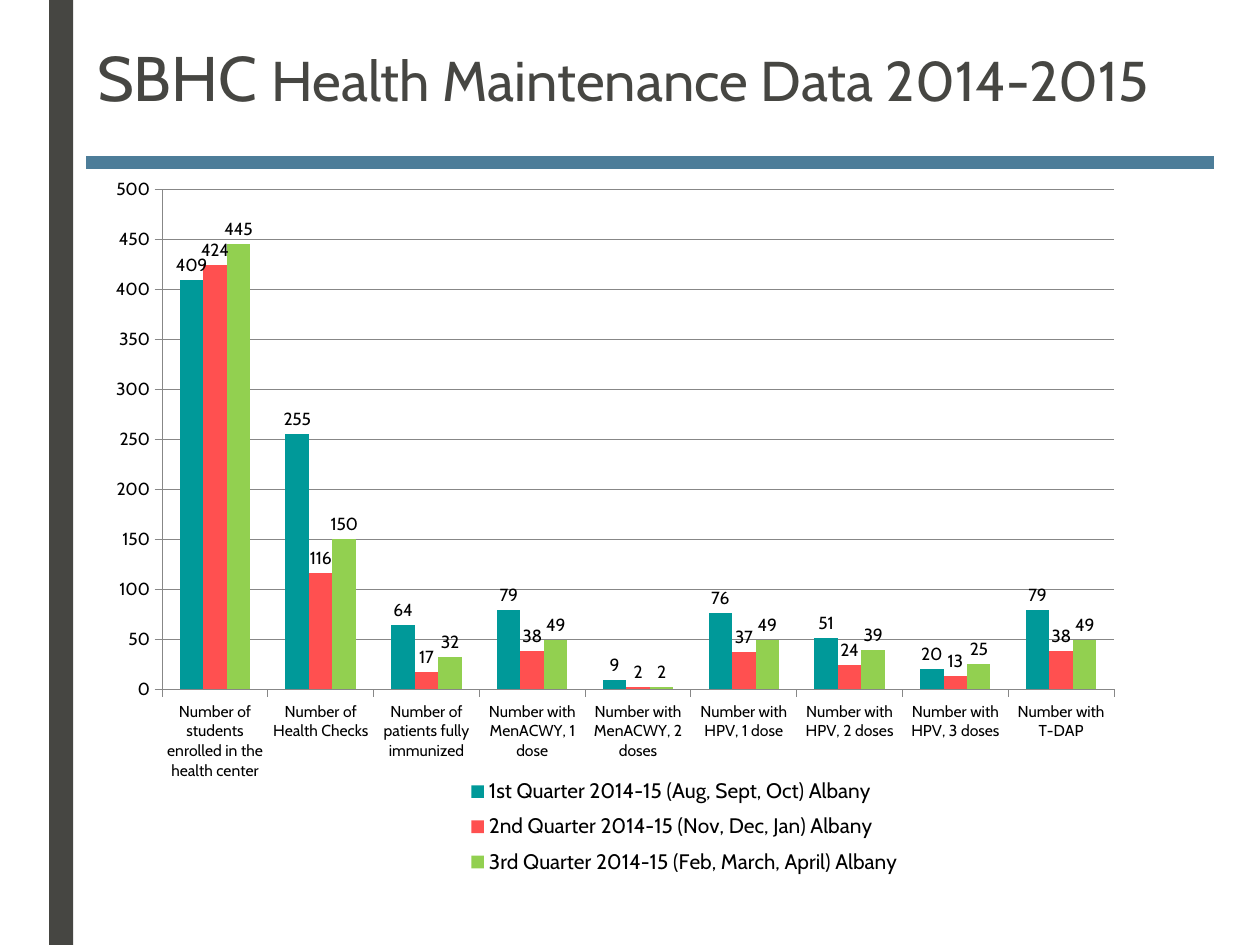
from lxml import etree
from pptx import Presentation
from pptx.chart.data import CategoryChartData
from pptx.dml.color import RGBColor
from pptx.enum.chart import XL_CHART_TYPE, XL_LABEL_POSITION, XL_LEGEND_POSITION, XL_TICK_MARK
from pptx.enum.shapes import MSO_SHAPE
from pptx.enum.text import MSO_ANCHOR, MSO_AUTO_SIZE, PP_ALIGN
from pptx.oxml.ns import qn
from pptx.util import Pt

PX = 9144
FONT = "Cabin"
COLORS = {
    "dark": "464642", "rule": "4D7D99", "text": "000000", "grid": "878787",
    "first": "009999", "second": "FF5050", "third": "92D050",
}
COLUMNS = XL_CHART_TYPE.COLUMN_CLUSTERED
OUTSIDE_END = XL_LABEL_POSITION.OUTSIDE_END
LEGEND_RIGHT = XL_LEGEND_POSITION.RIGHT
TICK_OUTSIDE = XL_TICK_MARK.OUTSIDE
TICK_NONE = XL_TICK_MARK.NONE
RECTANGLE, MINUS = MSO_SHAPE.RECTANGLE, MSO_SHAPE.MATH_MINUS
TOP, LEFT, NO_AUTOFIT = MSO_ANCHOR.TOP, PP_ALIGN.LEFT, MSO_AUTO_SIZE.NONE

TITLE_RUNS = [("SBHC ", 36), ("Health Maintenance Data 2014-2015", 32)]
CATEGORIES = [
    "Number of students enrolled in the health center",
    "Number of Health Checks",
    "Number of patients fully immunized",
    "Number with MenACWY, 1 dose",
    "Number with MenACWY, 2 doses",
    "Number with HPV, 1 dose",
    "Number with HPV, 2 doses",
    "Number with HPV, 3 doses",
    "Number with T-DAP",
]
QUARTERS = [
    ("1st Quarter 2014-15 (Aug, Sept, Oct) Albany", "first",
     [409, 255, 64, 79, 9, 76, 51, 20, 79]),
    ("2nd Quarter 2014-15 (Nov, Dec, Jan) Albany", "second",
     [424, 116, 17, 38, 2, 37, 24, 13, 38]),
    ("3rd Quarter 2014-15 (Feb, March, April) Albany", "third",
     [445, 150, 32, 49, 2, 49, 39, 25, 49]),
]


def emu(box):
    """Turn a box in px into EMU."""
    return [value * PX for value in box]


def color(name):
    """Look up a palette colour."""
    return RGBColor.from_string(COLORS[name])


def style_font(font, size, name):
    """Set typeface, size and colour."""
    font.name = FONT
    font.size = Pt(size)
    font.bold = False
    font.color.rgb = color(name)


def style_line(line):
    """Make a thin grey chart line."""
    line.color.rgb = color("grid")
    line.width = Pt(0.5)


def add_block(slide, kind, box, fill):
    """Add a plain filled shape."""
    shape = slide.shapes.add_shape(kind, *emu(box))
    shape.shadow.inherit = False
    shape.fill.solid()
    shape.fill.fore_color.rgb = color(fill)
    shape.line.fill.background()


def place_title(slide, box):
    """Move the title placeholder and fill it run by run."""
    title = slide.shapes.title
    title.left, title.top, title.width, title.height = emu(box)
    frame = title.text_frame
    frame.word_wrap = True
    frame.auto_size = NO_AUTOFIT
    frame.vertical_anchor = TOP
    paragraph = frame.paragraphs[0]
    paragraph.alignment = LEFT
    paragraph.line_spacing = 0.89
    for text, size in TITLE_RUNS:
        run = paragraph.add_run()
        run.text = text
        style_font(run.font, size, "dark")


def set_layout(element, fractions, inner=False):
    """Give a chart part a manual layout in fractions of the chart."""
    layout = element.find(qn("c:layout"))
    if layout is None:
        layout = etree.Element(qn("c:layout"))
        if inner:
            element.insert(0, layout)
        else:
            element.find(qn("c:legendPos")).addnext(layout)
    manual = etree.SubElement(layout, qn("c:manualLayout"))
    settings = [("layoutTarget", "inner")] if inner else []
    settings += [("xMode", "edge"), ("yMode", "edge")]
    settings += zip("xywh", fractions)
    for tag, value in settings:
        etree.SubElement(manual, qn(f"c:{tag}")).set("val", str(value))


def style_axes(chart):
    """Format both axes and the gridlines."""
    category_axis, value_axis = chart.category_axis, chart.value_axis
    for axis, size in ((category_axis, 9), (value_axis, 10)):
        axis.major_tick_mark = TICK_OUTSIDE
        axis.minor_tick_mark = TICK_NONE
        style_line(axis.format.line)
        style_font(axis.tick_labels.font, size, "text")
    value_axis.minimum_scale, value_axis.maximum_scale = 0, 500
    value_axis.major_unit = 50
    value_axis.has_major_gridlines = True
    style_line(value_axis.major_gridlines.format.line)


def style_series(plot):
    """Colour the columns and show their values."""
    plot.gap_width, plot.overlap = 150, 0
    plot.vary_by_categories = False
    for series, (_, fill, _) in zip(plot.series, QUARTERS):
        series.format.fill.solid()
        series.format.fill.fore_color.rgb = color(fill)
        series.invert_if_negative = False
        labels = series.data_labels
        labels.show_value = True
        labels.position = OUTSIDE_END
        style_font(labels.font, 10, "text")


def add_quarter_chart(slide, box):
    """Add the clustered columns of the three quarters."""
    data = CategoryChartData()
    data.categories = CATEGORIES
    for name, _, values in QUARTERS:
        data.add_series(name, values)
    chart = slide.shapes.add_chart(COLUMNS, *emu(box), data).chart
    chart.has_title = False
    style_font(chart.font, 10, "text")
    style_axes(chart)
    style_series(chart.plots[0])
    chart.has_legend = True
    legend = chart.legend
    legend.position = LEGEND_RIGHT
    legend.include_in_layout = False
    style_font(legend.font, 12, "text")
    plot_area = chart.plots[0]._element.getparent()
    set_layout(plot_area, (0.04, 0.03, 0.92, 0.69), inner=True)
    set_layout(legend._element, (0.33, 0.83, 0.43, 0.16))


def build_slide(presentation):
    """Build the health maintenance slide."""
    slide = presentation.slides.add_slide(presentation.slide_layouts[5])
    add_block(slide, RECTANGLE, (39, 0, 19, 750), "dark")
    place_title(slide, (67, 33, 917, 125))
    add_quarter_chart(slide, (92, 133, 825, 575))
    add_block(slide, MINUS, (-93, 108, 1218, 42), "rule")


def main():
    """Create and save the presentation."""
    presentation = Presentation()
    presentation.slide_width, presentation.slide_height = emu((1000, 750))
    build_slide(presentation)
    presentation.save("out.pptx")


if __name__ == "__main__":
    main()
